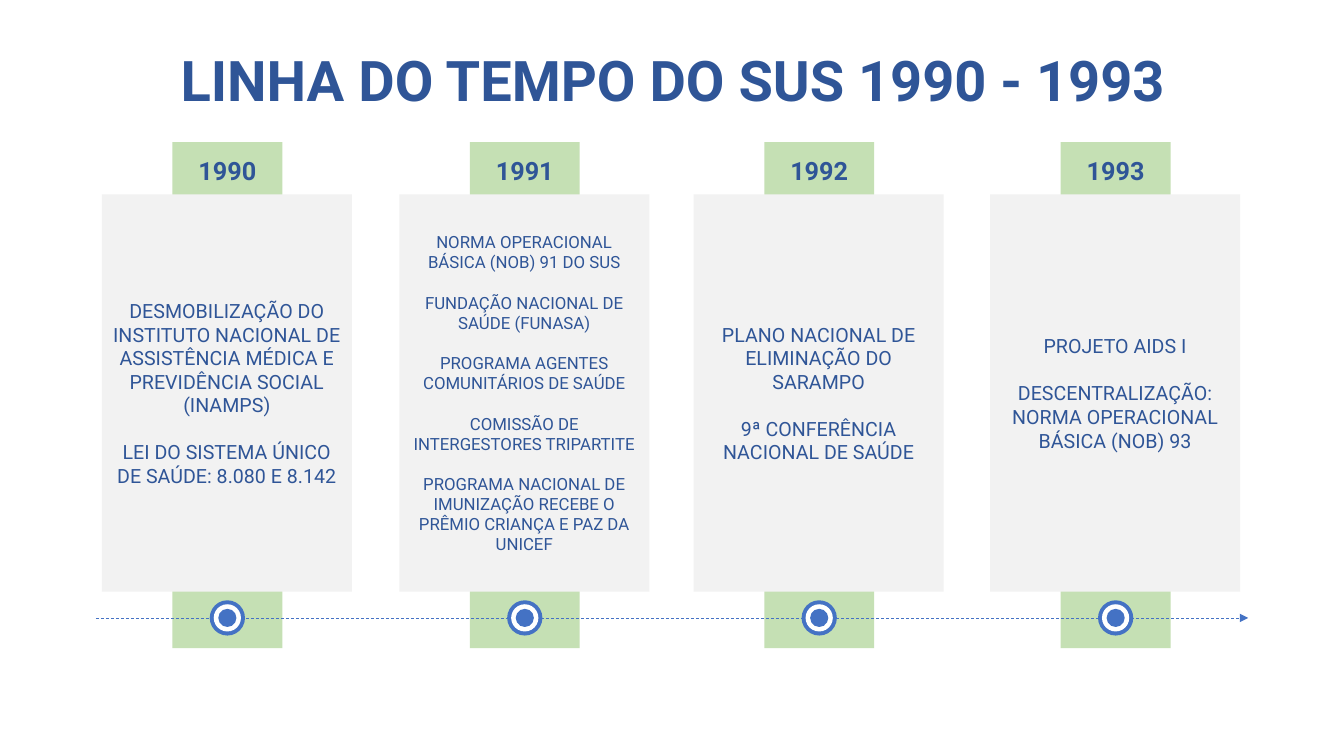
from dataclasses import dataclass

from lxml import etree
from pptx import Presentation
from pptx import util as u
from pptx.dml import color as c
from pptx.enum import dml, shapes, text
from pptx.oxml import ns

PX = 9144
FONT = "Roboto"
COLORS = {
    "navy": "2F5597",
    "blue": "4472C4",
    "green": "C5E0B4",
    "gray": "F2F2F2",
    "white": "FFFFFF",
}
STRIP_W, CARD_W, CARD_INSET = 109, 248, 70
DOT_CENTER_Y = 613
RINGS = ((35, "blue"), (27, "white"), (18, "blue"))


@dataclass(frozen=True)
class Milestone:
    year: str
    left: int
    size: int
    events: tuple[str, ...]


MILESTONES = (
    Milestone("1990", 171, 14, (
        "DESMOBILIZAÇÃO DO\nINSTITUTO NACIONAL DE ASSISTÊNCIA MÉDICA E PREVIDÊNCIA SOCIAL (INAMPS)",
        "LEI DO SISTEMA ÚNICO DE SAÚDE: 8.080 E 8.142",
    )),
    Milestone("1991", 466, 12, (
        "NORMA OPERACIONAL BÁSICA (NOB) 91 DO SUS",
        "FUNDAÇÃO NACIONAL DE SAÚDE (FUNASA)",
        "PROGRAMA AGENTES COMUNITÁRIOS DE SAÚDE",
        "COMISSÃO DE INTERGESTORES TRIPARTITE",
        "PROGRAMA NACIONAL DE IMUNIZAÇÃO RECEBE O PRÊMIO CRIANÇA E PAZ DA UNICEF",
    )),
    Milestone("1992", 758, 14, (
        "PLANO NACIONAL DE ELIMINAÇÃO DO SARAMPO",
        "9ª CONFERÊNCIA NACIONAL DE SAÚDE",
    )),
    Milestone("1993", 1052, 14, (
        "PROJETO AIDS I",
        "DESCENTRALIZAÇÃO: NORMA OPERACIONAL BÁSICA (NOB) 93",
    )),
)


def px(*values: int) -> list[u.Emu]:
    return [u.Emu(round(v * PX)) for v in values]


def rgb(name: str) -> c.RGBColor:
    return c.RGBColor.from_string(COLORS[name])


def write(sp, *blocks: str, size: int, bold: bool = False, gap: float = 0,
          anchor=text.MSO_ANCHOR.MIDDLE, fit=text.MSO_AUTO_SIZE.NONE,
          line_spacing: float | None = None) -> None:
    tf = sp.text_frame
    tf.word_wrap = True
    tf.auto_size = fit
    tf.vertical_anchor = anchor
    for i, block in enumerate(blocks):
        for j, line in enumerate(block.split("\n")):
            first = i == j == 0
            p = tf.paragraphs[0] if first else tf.add_paragraph()
            p.alignment = text.PP_ALIGN.CENTER
            p.space_before = u.Pt(gap if i and not j else 0)
            if line_spacing:
                p.line_spacing = line_spacing
            r = p.add_run()
            r.text = line
            r.font.name = FONT
            r.font.size = u.Pt(size)
            r.font.bold = bold
            r.font.color.rgb = rgb("navy")


def add_block(s, kind, box: tuple[int, ...], fill: str):
    sp = s.shapes.add_shape(kind, *px(*box))
    sp.shadow.inherit = False
    sp.fill.solid()
    sp.fill.fore_color.rgb = rgb(fill)
    sp.line.fill.background()
    return sp


def add_milestone(s, m: Milestone) -> None:
    rect = shapes.MSO_SHAPE.RECTANGLE
    add_block(s, rect, (m.left, 141, STRIP_W, 502), "green")
    card = add_block(s, rect, (m.left - CARD_INSET, 193, CARD_W, 394), "gray")
    write(card, *m.events, size=m.size, gap=m.size * 1.2)
    year = s.shapes.add_textbox(*px(m.left, 149, STRIP_W, 40))
    write(year, m.year, size=18, bold=True, anchor=text.MSO_ANCHOR.TOP,
          fit=text.MSO_AUTO_SIZE.SHAPE_TO_FIT_TEXT)


def add_axis(s) -> None:
    line = s.shapes.add_connector(shapes.MSO_CONNECTOR.STRAIGHT,
                                  *px(95, DOT_CENTER_Y, 1238, DOT_CENTER_Y))
    line.line.color.rgb = rgb("blue")
    line.line.width = u.Pt(0.5)
    line.line.dash_style = dml.MSO_LINE.DASH
    ln = line.line._get_or_add_ln()
    etree.SubElement(ln, ns.qn("a:tailEnd"), type="triangle")
    etree.SubElement(line._element.spPr, ns.qn("a:effectLst"))


def add_dot(s, m: Milestone) -> None:
    center = m.left + STRIP_W / 2
    for d, fill in RINGS:
        box = (center - d / 2, DOT_CENTER_Y - d / 2, d, d)
        add_block(s, shapes.MSO_SHAPE.OVAL, box, fill)


def main() -> None:
    prs = Presentation()
    prs.slide_width, prs.slide_height = u.Inches(13.33), u.Inches(7.5)
    s = prs.slides.add_slide(prs.slide_layouts[5])
    title = s.shapes.title
    title.left, title.top, title.width, title.height = px(92, 40, 1150, 86)
    write(title, "LINHA DO TEMPO DO SUS 1990 - 1993", size=40, bold=True,
          line_spacing=0.9)
    for m in MILESTONES:
        add_milestone(s, m)
    add_axis(s)
    for m in MILESTONES:
        add_dot(s, m)
    prs.save("out.pptx")


if __name__ == "__main__":
    main()
